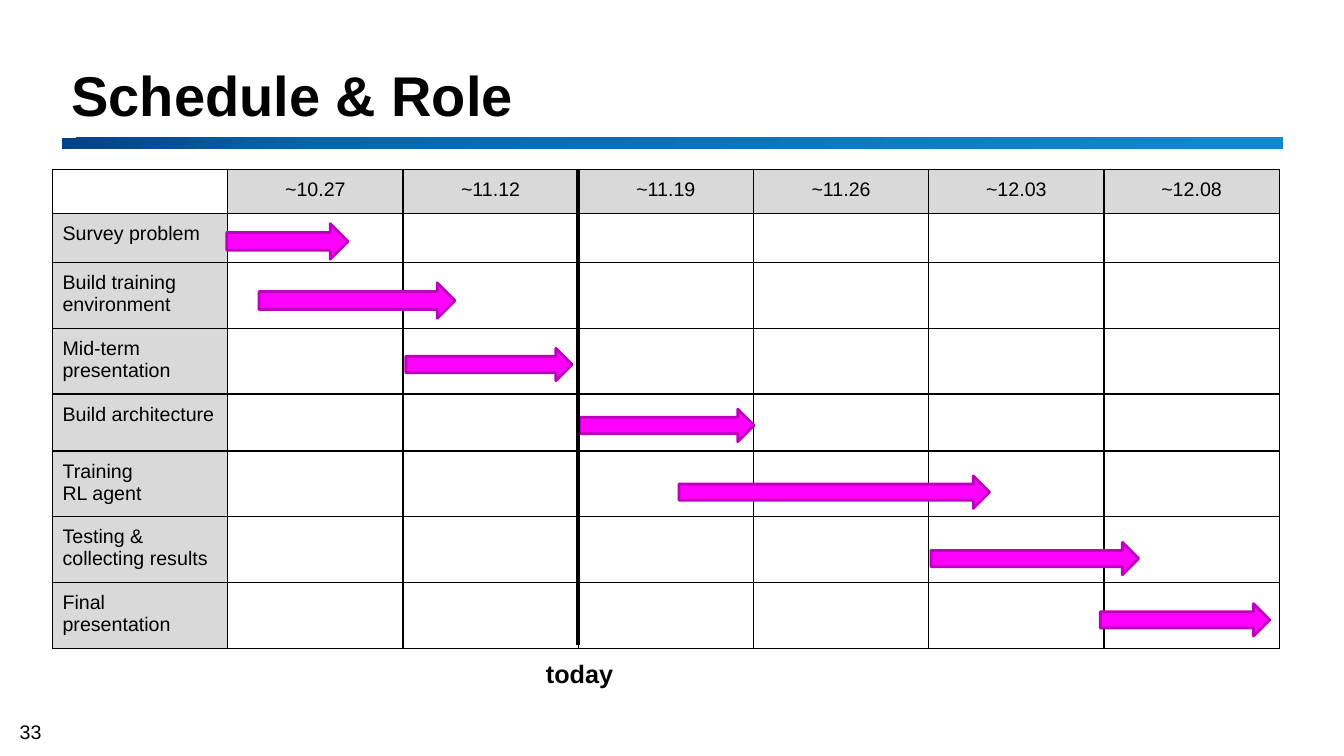
import pptx
import pptx.util
import pptx.dml.color
import pptx.enum.shapes
import pptx.enum.text
import pptx.oxml
import pptx.oxml.ns

Pt = pptx.util.Pt
SHAPE = pptx.enum.shapes.MSO_SHAPE
ALIGN = pptx.enum.text.PP_ALIGN
ANCHOR = pptx.enum.text.MSO_ANCHOR
NS = pptx.oxml.ns.nsdecls("a")

TITLE = "Schedule & Role"
PAGE = "33"
DEADLINES = ["~10.27", "~11.12", "~11.19", "~11.26", "~12.03", "~12.08"]
# task, row height, arrow (left, top, width, height)
TASKS = [
    ("Survey problem", 35, (162, 159.8, 86.6, 25.4)),
    ("Build training\nenvironment", 45.7, (185, 202, 140, 25.4)),
    ("Mid-term\npresentation", 45.7, (289.8, 248.8, 118.8, 23.2)),
    ("Build architecture", 40.7, (414, 292.3, 124.6, 23.2)),
    ("Training\nRL agent", 45.7, (485, 340, 221.8, 23.2)),
    ("Testing &\ncollecting results", 45.7, (665, 387.4, 148.3, 23.2)),
    ("Final presentation", 45.7, (786, 431.2, 121, 23.2)),
]
BAR_STOPS = [(0, "004187"), (21, "0A64A8"), (96, "1487C8")]

BLACK, GREY, MAGENTA, PURPLE = "000000", "D9D9D9", "FF00FF", "BD00BD"
TABLE_LEFT, TABLE_TOP = 37.5, 121
COLUMN_WIDTH, HEADER_HEIGHT = 125.2, 31.4
TODAY_COLUMN = 3
TODAY_X, TODAY_BOTTOM = TABLE_LEFT + TODAY_COLUMN * COLUMN_WIDTH, 460.8


def color(hex_string):
    return pptx.dml.color.RGBColor.from_string(hex_string)


def write(frame, text, size, bold=False, align=ALIGN.LEFT):
    frame.text = text
    for paragraph in frame.paragraphs:
        paragraph.alignment = align
        for run in paragraph.runs:
            run.font.name = "Arial"
            run.font.size = Pt(size)
            run.font.bold = bold
            run.font.color.rgb = color(BLACK)


def add_text(slide, box, text, size, margins=(7.2, 3.6), anchor=ANCHOR.TOP, **style):
    frame = slide.shapes.add_textbox(*map(Pt, box)).text_frame
    frame.word_wrap = True
    frame.vertical_anchor = anchor
    frame.margin_left = frame.margin_right = Pt(margins[0])
    frame.margin_top = frame.margin_bottom = Pt(margins[1])
    write(frame, text, size, **style)
    return frame


def add_title_bar(slide):
    bar = slide.shapes.add_shape(SHAPE.RECTANGLE, Pt(44), Pt(98.4), Pt(872), Pt(8))
    bar.shadow.inherit = False
    bar.line.fill.background()
    stops = "".join(
        f'<a:gs pos="{percent * 1000}"><a:srgbClr val="{shade}"/></a:gs>'
        for percent, shade in BAR_STOPS
    )
    gradient = pptx.oxml.parse_xml(
        f'<a:gradFill {NS} rotWithShape="1"><a:gsLst>{stops}</a:gsLst>'
        '<a:lin ang="2700000" scaled="0"/></a:gradFill>'
    )
    bar.fill.background()
    properties = bar._element.spPr
    properties.replace(properties.find(pptx.oxml.ns.qn("a:noFill")), gradient)


def style_cell(cell, text, align):
    """Fill a labelled cell grey and draw thin borders round any cell."""
    if text:
        cell.margin_left = cell.margin_right = Pt(7.2)
        cell.margin_top = cell.margin_bottom = Pt(6.7)
        write(cell.text_frame, text, 14, align=align)
        cell.fill.solid()
        cell.fill.fore_color.rgb = color(GREY)
    else:
        cell.fill.background()
    properties = cell._tc.get_or_add_tcPr()
    for index, side in enumerate("LRTB"):
        properties.insert(index, pptx.oxml.parse_xml(
            f'<a:ln{side} {NS} w="{Pt(1)}"><a:solidFill><a:srgbClr val="{BLACK}"/>'
            f'</a:solidFill></a:ln{side}>'
        ))


def add_schedule(slide):
    heights = [HEADER_HEIGHT] + [height for _, height, _ in TASKS]
    columns = len(DEADLINES) + 1
    table = slide.shapes.add_table(
        len(heights), columns, Pt(TABLE_LEFT), Pt(TABLE_TOP),
        Pt(columns * COLUMN_WIDTH), Pt(sum(heights)),
    ).table
    table.first_row = table.horz_banding = False
    for column in table.columns:
        column.width = Pt(COLUMN_WIDTH)
    for row, height in zip(table.rows, heights):
        row.height = Pt(height)
    labels = [[""] + DEADLINES]
    labels += [[task] + [""] * len(DEADLINES) for task, _, _ in TASKS]
    for r, row_labels in enumerate(labels):
        for c, label in enumerate(row_labels):
            style_cell(table.cell(r, c), label, ALIGN.LEFT if r else ALIGN.CENTER)


def add_task_arrow(slide, box):
    arrow = slide.shapes.add_shape(SHAPE.RIGHT_ARROW, *map(Pt, box))
    arrow.shadow.inherit = False
    arrow.fill.solid()
    arrow.fill.fore_color.rgb = color(MAGENTA)
    arrow.line.color.rgb = color(PURPLE)
    arrow.line.width = Pt(2)


def add_today(slide):
    today = slide.shapes.add_connector(
        pptx.enum.shapes.MSO_CONNECTOR.STRAIGHT,
        Pt(TODAY_X), Pt(TABLE_TOP), Pt(TODAY_X), Pt(TODAY_BOTTOM),
    )
    today.line.color.rgb = color(BLACK)
    today.line.width = Pt(3)
    today._element.spPr.append(pptx.oxml.parse_xml(f"<a:effectLst {NS}/>"))
    add_text(slide, (374.4, 466.6, 79.2, 28.8), "today", 18, bold=True, align=ALIGN.CENTER)


def main():
    deck = pptx.Presentation()
    deck.slide_width, deck.slide_height = Pt(960), Pt(540)
    slide = deck.slides.add_slide(deck.slide_layouts[6])
    add_text(slide, (14, 513.4, 32, 17.3), PAGE, 14, margins=(0, 0), anchor=ANCHOR.BOTTOM)
    add_title_bar(slide)
    title = add_text(slide, (44, 23.8, 869, 71.3), TITLE, 40, anchor=ANCHOR.BOTTOM, bold=True)
    title.paragraphs[0].line_spacing = Pt(36)
    add_schedule(slide)
    for _, _, arrow_box in TASKS:
        add_task_arrow(slide, arrow_box)
    add_today(slide)
    deck.save("out.pptx")


if __name__ == "__main__":
    main()
